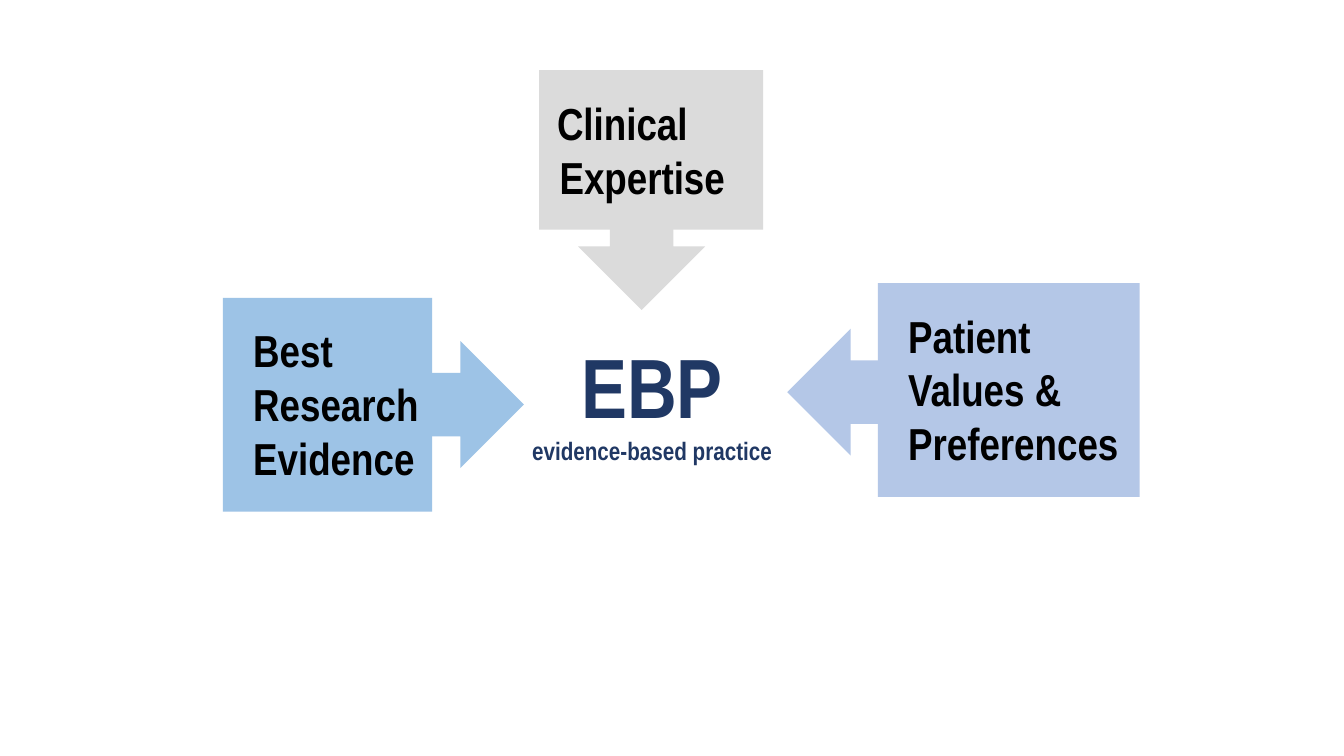
from dataclasses import dataclass

from pptx import Presentation
from pptx.dml.color import RGBColor
from pptx.enum.shapes import MSO_SHAPE
from pptx.enum.text import MSO_ANCHOR, PP_ALIGN
from pptx.shapes.autoshape import Shape
from pptx.slide import Slide
from pptx.util import Pt

RECT = MSO_SHAPE.RECTANGLE
ARROW = MSO_SHAPE.RIGHT_ARROW
TOP = MSO_ANCHOR.TOP
LEFT = PP_ALIGN.LEFT
CENTER = PP_ALIGN.CENTER


@dataclass(frozen=True)
class Theme:
    """Colours, font and type sizes of the slide."""

    font: str = "Arial Narrow"
    gray: str = "DBDBDB"
    blue: str = "9DC3E6"
    lilac: str = "B4C7E7"
    navy: str = "203864"
    black: str = "000000"
    title: float = 60
    card: float = 32
    note: float = 18


@dataclass(frozen=True)
class Box:
    """A place on the slide, in points."""

    left: float
    top: float
    width: float
    height: float


@dataclass(frozen=True)
class Factor:
    """A card and the arrow that leads from it to the centre."""

    lines: tuple[str, ...]
    fill: str
    card: Box
    inset: float
    hang: float
    tip: tuple[float, float]
    turn: float


THEME = Theme()
SIZE = (960, 540)
ARROW_SIZE = (111.6, 90.7)
CARD_TOP = 18
FACTORS = (
    Factor(("Clinical", "Expertise"), THEME.gray,
           Box(385.2, 50.2, 160, 113.9), 12.7, 1.8, (402.5, 120.2), 90),
    Factor(("Best", "Research", "Evidence"), THEME.blue,
           Box(159.3, 212.8, 149.5, 152.7), 21.6, 0, (262.6, 243.6), 0),
    Factor(("Patient", "Values &", "Preferences"), THEME.lilac,
           Box(627.1, 202.2, 187, 152.7), 21.6, 0, (562.3, 234.7), 180),
)
CENTRE = Box(370.8, 235.4, 190, 101.5)
LABELS = (("EBP", THEME.title), ("evidence-based practice", THEME.note))


def add_block(slide: Slide, kind: MSO_SHAPE, box: Box, fill: str) -> Shape:
    """Add a flat filled shape without outline."""
    shape = slide.shapes.add_shape(
        kind, Pt(box.left), Pt(box.top), Pt(box.width), Pt(box.height))
    shape.shadow.inherit = False
    shape.fill.solid()
    shape.fill.fore_color.rgb = RGBColor.from_string(fill)
    shape.line.fill.background()
    return shape


def style(para, size: float, color: str, align: PP_ALIGN) -> None:
    """Set the type of a paragraph."""
    para.alignment = align
    para.font.name = THEME.font
    para.font.size = Pt(size)
    para.font.bold = True
    para.font.color.rgb = RGBColor.from_string(color)


def add_factor(slide: Slide, factor: Factor) -> None:
    """Add an arrow and its card."""
    arrow = add_block(slide, ARROW, Box(*factor.tip, *ARROW_SIZE), factor.fill)
    arrow.rotation = factor.turn
    frame = add_block(slide, RECT, factor.card, factor.fill).text_frame
    frame.word_wrap = True
    frame.vertical_anchor = TOP
    frame.margin_left = Pt(factor.inset)
    frame.margin_top = Pt(CARD_TOP)
    frame.margin_right = frame.margin_bottom = 0
    para = frame.paragraphs[0]
    para.text = "\n".join(factor.lines)
    style(para, THEME.card, THEME.black, LEFT)
    if factor.hang:
        props = para._p.get_or_add_pPr()
        props.set("marL", str(Pt(factor.hang)))
        props.set("indent", str(-Pt(factor.hang)))


def add_centre(slide: Slide) -> None:
    """Add the central term with its meaning below."""
    frame = slide.shapes.add_textbox(
        Pt(CENTRE.left), Pt(CENTRE.top),
        Pt(CENTRE.width), Pt(CENTRE.height)).text_frame
    frame.word_wrap = True
    for index, (text, size) in enumerate(LABELS):
        para = frame.add_paragraph() if index else frame.paragraphs[0]
        para.text = text
        style(para, size, THEME.navy, CENTER)


def main() -> None:
    """Build and save the slide."""
    deck = Presentation()
    deck.slide_width, deck.slide_height = map(Pt, SIZE)
    slide = deck.slides.add_slide(deck.slide_layouts[6])
    for factor in FACTORS:
        add_factor(slide, factor)
    add_centre(slide)
    deck.save("out.pptx")


if __name__ == "__main__":
    main()
